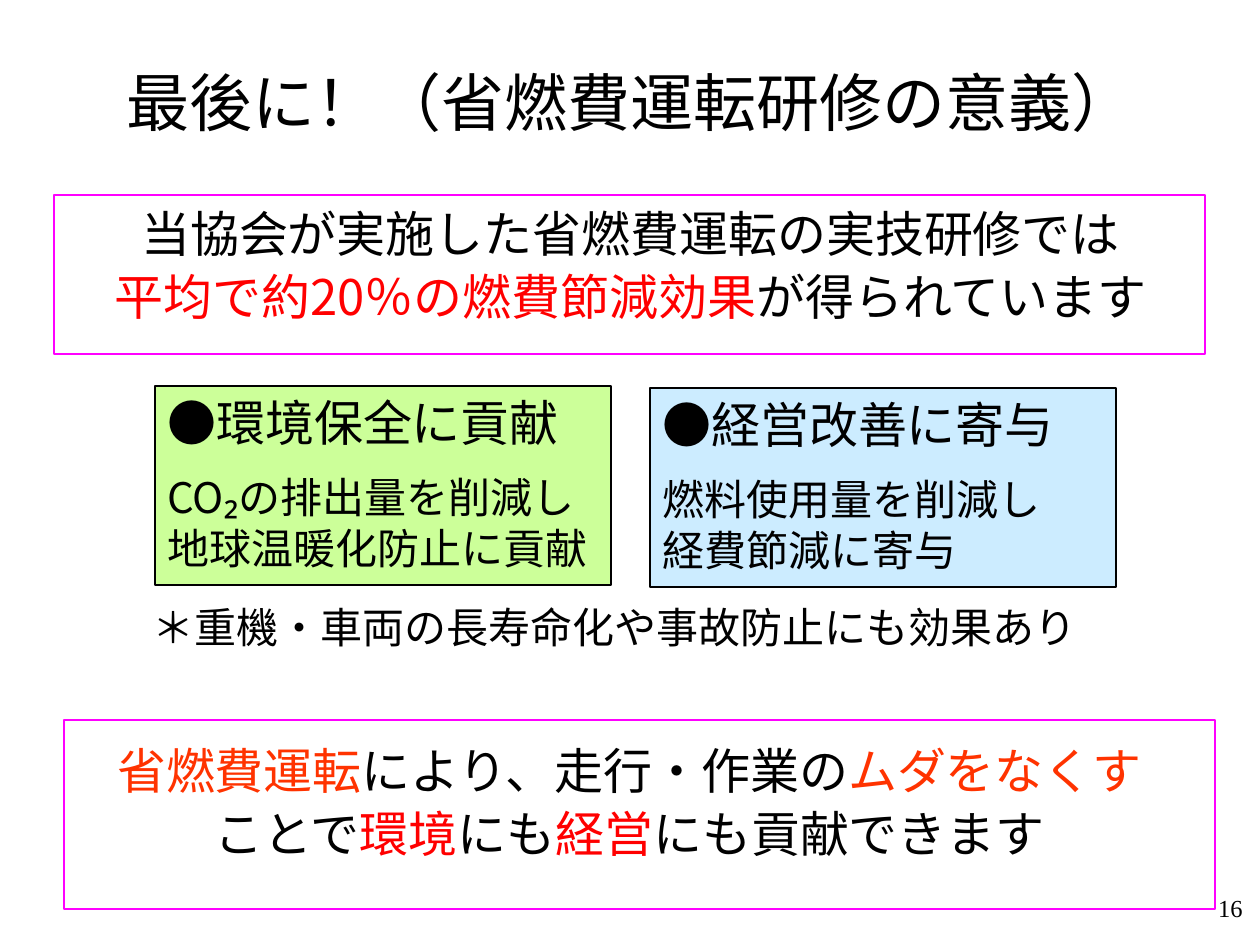
from pptx import Presentation, util as u
from pptx.dml.color import RGBColor
from pptx.enum import shapes, text
from pptx.oxml.ns import qn
from lxml import etree

PX = 914400 // 126
BLACK, RED, ORANGE, MAGENTA = "000000", "FF0000", "FF3300", "FF00FF"
GOTHIC, SERIF, SANS = "Noto Sans CJK JP", "Times New Roman", "Arial"

# A paragraph is a list of (text, colour) runs.
TITLE = [[("最後に！（省燃費運転研修の意義）", BLACK)]]
RESULT = [
    [("当協会が実施した省燃費運転の実技研修では", BLACK)],
    [("平均で約20％の燃費節減効果", RED), ("が得られています", BLACK)],
]
NOTE = [[("＊重機・車両の長寿命化や事故防止にも効果あり", BLACK)]]
CONCLUSION = [
    [("省燃費運転", ORANGE), ("により、走行・作業の", BLACK), ("ムダをなくす", ORANGE)],
    [("ことで", BLACK), ("環境", RED), ("にも", BLACK), ("経営", RED),
     ("にも貢献できます", BLACK)],
]
PAGE = [[("16", BLACK)]]

# box, fill, font, heading, body
BENEFITS = [
    ((155, 386, 456, 199), "CCFF99", GOTHIC, "●環境保全に貢献",
     "CO₂の排出量を削減し\v地球温暖化防止に貢献"),
    ((650, 388, 466, 199), "CCECFF", SANS, "●経営改善に寄与",
     "燃料使用量を削減し\v経費節減に寄与"),
]
FRAMES = [(54, 195, 1151, 159), (64, 720, 1151, 189)]

# paragraphs, box, format
TEXTS = [
    (TITLE, (64, 55, 1134, 92),
     dict(sizes=[36], font=SERIF, align="CENTER", anchor="MIDDLE")),
    (RESULT, (58, 204, 1145, 179),
     dict(sizes=[28, 28], align="CENTER", line=0.9, gap=0.2)),
    (NOTE, (140, 601, 1021, 79), dict(sizes=[24], line=0.9)),
    (CONCLUSION, (74, 741, 1111, 179),
     dict(sizes=[28, 28], align="CENTER", line=0.9, gap=0.2)),
    (PAGE, (993, 887, 262, 63), dict(sizes=[14], font=SERIF, align="RIGHT")),
]


def rgb(colour):
    return RGBColor.from_string(colour)


def emu(box):
    return [n * PX for n in box]


def write(sp, paragraphs, sizes, font=GOTHIC, align="LEFT", anchor="TOP",
          line=None, gap=0.5):
    """Fill a shape with text; gap is the space between paragraphs in ems."""
    tf = sp.text_frame
    tf.word_wrap = True
    tf.vertical_anchor = getattr(text.MSO_ANCHOR, anchor)
    for i, (runs, size) in enumerate(zip(paragraphs, sizes)):
        p = tf.add_paragraph() if i else tf.paragraphs[0]
        p.alignment = getattr(text.PP_ALIGN, align)
        p.space_before = u.Pt(size * gap if i else 0)
        if line:
            p.line_spacing = line
        for words, colour in runs:
            for j, part in enumerate(words.split("\v")):
                if j:
                    p.add_line_break()
                r = p.add_run()
                r.text = part
                r.font.size = u.Pt(size)
                r.font.name = font
                r.font.color.rgb = rgb(colour)
                ea = etree.SubElement(r.font._element, qn("a:ea"))
                ea.set("typeface", GOTHIC)


def add_rect(s, box, line, width, fill=None):
    sp = s.shapes.add_shape(shapes.MSO_SHAPE.RECTANGLE, *emu(box))
    sp.shadow.inherit = False
    sp.line.color.rgb = rgb(line)
    sp.line.width = u.Pt(width)
    if fill:
        sp.fill.solid()
        sp.fill.fore_color.rgb = rgb(fill)
    else:
        sp.fill.background()
    return sp


def main():
    prs = Presentation()
    prs.slide_width, prs.slide_height = u.Inches(10), u.Inches(7.5)
    s = prs.slides.add_slide(prs.slide_layouts[6])
    for box, fill, font, heading, body in BENEFITS:
        sp = add_rect(s, box, BLACK, 0.75, fill)
        write(sp, [[(heading, BLACK)], [(body, BLACK)]], sizes=[28, 24], font=font)
    for box in FRAMES:
        add_rect(s, box, MAGENTA, 1.25)
    for paragraphs, box, style in TEXTS:
        write(s.shapes.add_textbox(*emu(box)), paragraphs, **style)
    prs.save("out.pptx")


if __name__ == "__main__":
    main()
